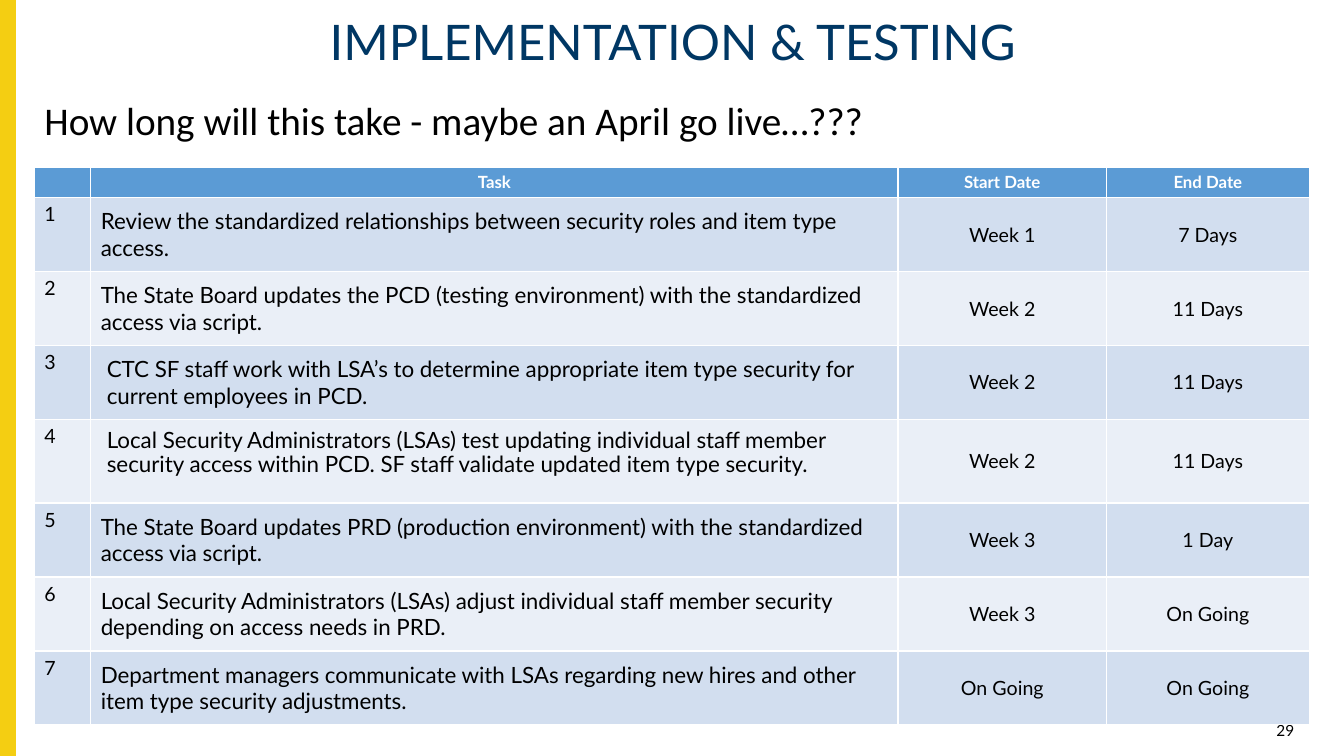
"""Build the implementation and testing timeline slide."""
from lxml.etree import SubElement
from pptx import Presentation
from pptx.dml.color import RGBColor
from pptx.enum.shapes import MSO_SHAPE
from pptx.enum.text import MSO_ANCHOR, MSO_AUTO_SIZE, PP_ALIGN
from pptx.oxml.ns import qn
from pptx.util import Pt

TITLE = "IMPLEMENTATION & TESTING"
LEAD = "How long will this take - maybe an April go live…???"
PAGE = "29"
HEADS = ["", "Task", "Start Date", "End Date"]
TASKS = [
    ("Review the standardized relationships between security roles and item type access.",
     "Week 1", "7 Days"),
    ("The State Board updates the PCD (testing environment) with the standardized "
     "access via script.", "Week 2", "11 Days"),
    ("CTC SF staff work with LSA’s to determine appropriate item type security for "
     "current employees in PCD.", "Week 2", "11 Days"),
    ("Local Security Administrators (LSAs) test updating individual staff member "
     "security access within PCD. SF staff validate updated item type security.",
     "Week 2", "11 Days"),
    ("The State Board updates PRD (production environment) with the standardized "
     "access via script.", "Week 3", "1 Day"),
    ("Local Security Administrators (LSAs) adjust individual staff member security "
     "depending on access needs in PRD.", "Week 3", "On Going"),
    ("Department managers communicate with LSAs regarding new hires and other item "
     "type security adjustments.", "On Going", "On Going"),
]
WIDTHS = [40.3, 576.7, 149, 144.7]
HEAD_HIGH, ROW_HIGH, TALL_HIGH = 21.6, 46.8, 59.8
TALL, INSET = 4, (3, 4)
BLUE, BANDS = "5B9BD5", ("EAEFF7", "D2DEEF")
GOLD, NAVY, BLACK, WHITE = "F4CE12", "003764", "000000", "FFFFFF"
PAD, STEP = 7.2, 4.3


def paint(fill, color):
    fill.solid()
    fill.fore_color.rgb = RGBColor.from_string(color)


def write(frame, text, size, color=BLACK, align=PP_ALIGN.LEFT, font="Lato", bold=False):
    frame.text = text
    par = frame.paragraphs[0]
    par.alignment = align
    for run in par.runs:
        run.font.size = Pt(size)
        run.font.name = font
        run.font.bold = bold
        run.font.color.rgb = RGBColor.from_string(color)
    if not text:
        SubElement(par._p, qn("a:endParaRPr"), sz=str(size * 100))
    return par


def indent(par, left):
    props = par._p.get_or_add_pPr()
    props.set("marL", str(Pt(left)))
    props.set("indent", "0")
    return props


def place(shape, left, top, width, height):
    shape.left, shape.top = Pt(left), Pt(top)
    shape.width, shape.height = Pt(width), Pt(height)


def fill_row(table, row, texts):
    for col, text in enumerate(texts):
        cell = table.cell(row, col)
        paint(cell.fill, BANDS[row % 2] if row else BLUE)
        if not row:
            write(cell.text_frame, text, 12, WHITE, PP_ALIGN.CENTER, bold=True)
        elif col == 0:
            write(cell.text_frame, text, 14)
        elif col == 1:
            cell.margin_top = cell.margin_bottom = Pt(PAD)
            par = write(cell.text_frame, text, 16)
            if row in INSET:
                indent(par, STEP)
            if row == TALL:
                par.line_spacing = 0.9
                par.space_before = Pt(10)
        else:
            cell.vertical_anchor = MSO_ANCHOR.MIDDLE
            write(cell.text_frame, text, 14, align=PP_ALIGN.CENTER)


def main():
    deck = Presentation()
    deck.slide_width, deck.slide_height = Pt(960), Pt(540)
    slide = deck.slides.add_slide(deck.slide_layouts[1])
    title, lead = slide.placeholders
    shapes = slide.shapes

    stripe = shapes.add_shape(MSO_SHAPE.RECTANGLE, 0, 0, Pt(10.8), Pt(540))
    stripe.shadow.inherit = False
    paint(stripe.fill, GOLD)
    paint(stripe.line.fill, GOLD)
    stripe.line.width = Pt(1)

    place(title, 223.9, 10.8, 511.9, 41.8)
    title.text_frame.vertical_anchor = MSO_ANCHOR.MIDDLE
    title.text_frame.auto_size = MSO_AUTO_SIZE.NONE
    par = write(title.text_frame, TITLE, 35, NAVY)
    indent(par, STEP)
    par.line_spacing = 0.9

    place(lead, 24.5, 65.5, 897.8, 41)
    lead.text_frame.auto_size = MSO_AUTO_SIZE.NONE
    par = write(lead.text_frame, LEAD, 28, font="Calibri")
    par.space_before = Pt(0)
    SubElement(indent(par, 0), qn("a:buNone"))

    page = shapes.add_textbox(Pt(883.4), Pt(514.1), Pt(48.2), Pt(15.1))
    page.text_frame.word_wrap = True
    page.text_frame.vertical_anchor = MSO_ANCHOR.MIDDLE
    write(page.text_frame, PAGE, 11, align=PP_ALIGN.RIGHT)

    grid = shapes.add_table(len(TASKS) + 1, len(HEADS), Pt(24.5), Pt(119.5),
                            Pt(sum(WIDTHS)), Pt(394.6))
    table = grid.table
    for col, width in zip(table.columns, WIDTHS):
        col.width = Pt(width)
    for num, row in enumerate(table.rows):
        row.height = Pt(TALL_HIGH if num == TALL else ROW_HIGH if num else HEAD_HIGH)
    grid.height = Pt(394.6)
    fill_row(table, 0, HEADS)
    for num, task in enumerate(TASKS, 1):
        fill_row(table, num, (str(num), *task))

    deck.save("out.pptx")


if __name__ == "__main__":
    main()
